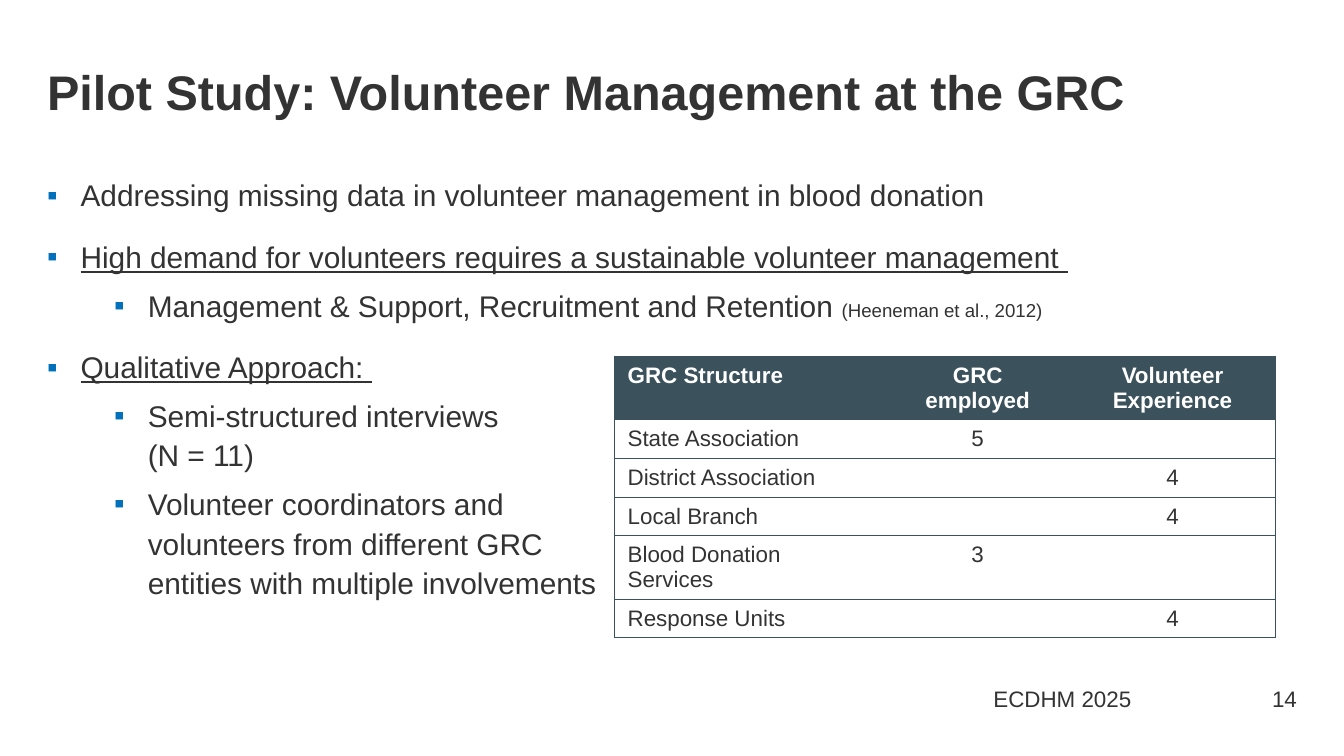
from dataclasses import dataclass

from lxml import etree
from pptx import Presentation
from pptx import util as u
from pptx.dml.color import RGBColor
from pptx.enum import text as t
from pptx.oxml.ns import qn


@dataclass(frozen=True)
class Theme:
    font: str = "Arial"
    ink: str = "333333"
    accent: str = "0271BB"
    header: str = "3B515B"
    white: str = "FFFFFF"
    title_size: int = 26
    body_size: int = 16
    small_size: int = 12
    citation_size: int = 10


THEME = Theme()
LEFT, CENTER, RIGHT = t.PP_ALIGN.LEFT, t.PP_ALIGN.CENTER, t.PP_ALIGN.RIGHT


def write(paragraph, wording, size=THEME.small_size, color=THEME.ink,
          bold=False, underline=False, align=LEFT):
    """Add formatted wording to a paragraph; a newline becomes a line break."""
    paragraph.alignment = align
    for number, line in enumerate(wording.split("\n")):
        if number:
            paragraph.add_line_break()
        run = paragraph.add_run()
        run.text = line
        run.font.name = THEME.font
        run.font.size = u.Pt(size)
        run.font.bold = bold
        run.font.underline = underline
        run.font.color.rgb = RGBColor.from_string(color)


class StudySlide:
    def __init__(self, deck, theme):
        self.theme = theme
        self.slide = deck.slides.add_slide(deck.slide_layouts[1])

    def place(self, shape, left, top, width, height):
        shape.left, shape.top = u.Inches(left), u.Inches(top)
        shape.width, shape.height = u.Inches(width), u.Inches(height)

    def frame(self, shape, anchor, left_inset=0.1, right_inset=0.1):
        frame = shape.text_frame
        frame.word_wrap = True
        frame.auto_size = t.MSO_AUTO_SIZE.NONE
        frame.vertical_anchor = anchor
        frame.margin_left, frame.margin_right = u.Inches(left_inset), u.Inches(right_inset)
        frame.margin_top = frame.margin_bottom = u.Inches(0.05)
        return frame

    def title(self, wording, *box):
        holder = self.slide.shapes.title
        self.place(holder, *box)
        paragraph = self.frame(holder, t.MSO_ANCHOR.TOP, left_inset=0).paragraphs[0]
        paragraph.line_spacing = 1.1
        write(paragraph, wording, size=self.theme.title_size, bold=True)

    def bullet(self, paragraph, level):
        paragraph.level = level
        props = paragraph._p.get_or_add_pPr()
        props.set("marL", str(u.Inches(0.25 + 0.5 * level)))
        props.set("indent", str(u.Inches(-0.25)))
        color = etree.SubElement(props, qn("a:buClr"))
        etree.SubElement(color, qn("a:srgbClr"), val=self.theme.accent)
        etree.SubElement(props, qn("a:buFont"), typeface=self.theme.font)
        etree.SubElement(props, qn("a:buChar"), char="▪")

    def bullets(self, points, *box):
        holder = self.slide.placeholders[1]
        self.place(holder, *box)
        frame = self.frame(holder, t.MSO_ANCHOR.TOP, left_inset=0)
        for number, (level, wording, underline, citation) in enumerate(points):
            paragraph = frame.add_paragraph() if number else frame.paragraphs[0]
            self.bullet(paragraph, level)
            paragraph.line_spacing = 1.1
            paragraph.space_before = u.Pt((5 if level else 12) if number else 0)
            write(paragraph, wording, size=self.theme.body_size, underline=underline)
            if citation:
                write(paragraph, citation, size=self.theme.citation_size)

    def footer(self, wording, align, right_inset, *box):
        label = self.slide.shapes.add_textbox(*map(u.Inches, box))
        frame = self.frame(label, t.MSO_ANCHOR.MIDDLE, right_inset=right_inset)
        write(frame.paragraphs[0], wording, align=align)

    def borders(self, cell, drawn_sides):
        props = cell._tc.get_or_add_tcPr()
        for side in "LRTB":
            line = etree.SubElement(props, qn(f"a:ln{side}"), w=str(u.Pt(0.5)))
            if side in drawn_sides:
                fill = etree.SubElement(line, qn("a:solidFill"))
                etree.SubElement(fill, qn("a:srgbClr"), val=self.theme.header)
            else:
                etree.SubElement(line, qn("a:noFill"))

    def table(self, rows, widths, heights, left, top):
        size = (left, top, sum(widths), sum(heights))
        table = self.slide.shapes.add_table(
            len(rows), len(widths), *map(u.Inches, size)).table
        table.horz_banding = False
        for column, width in zip(table.columns, widths):
            column.width = u.Inches(width)
        for row, height in zip(table.rows, heights):
            row.height = u.Inches(height)

        last = len(widths) - 1
        for r, row in enumerate(rows):
            for c, wording in enumerate(row):
                cell = table.cell(r, c)
                # Horizontal rules everywhere, vertical ones on the outside only
                self.borders(cell, "TB" + "L" * (c == 0) + "R" * (c == last))
                if r == 0:
                    cell.fill.solid()
                    cell.fill.fore_color.rgb = RGBColor.from_string(self.theme.header)
                else:
                    cell.fill.background()
                paragraph = cell.text_frame.paragraphs[0]
                if wording:
                    write(paragraph, wording, bold=r == 0,
                          color=self.theme.ink if r else self.theme.white,
                          align=CENTER if c else LEFT)
                else:
                    # Keeps an empty cell from stretching its row
                    end = etree.SubElement(paragraph._p, qn("a:endParaRPr"),
                                           sz=str(self.theme.small_size * 100))
                    etree.SubElement(end, qn("a:latin"), typeface=self.theme.font)


def main():
    deck = Presentation()
    deck.slide_width = u.Inches(10)
    deck.slide_height = deck.slide_width * 9 // 16
    study = StudySlide(deck, THEME)

    # Title
    study.title("Pilot Study: Volunteer Management at the GRC", 0.35, 0.37, 9.29, 0.63)

    # Study outline: level, wording, underlined, citation
    outline = [
        (0, "Addressing missing data in volunteer management in blood donation", False, ""),
        (0, "High demand for volunteers requires a sustainable volunteer management ", True, ""),
        (1, "Management & Support, Recruitment and Retention ", False,
         "(Heeneman et al., 2012)"),
        (0, "Qualitative Approach: ", True, ""),
        (1, "Semi-structured interviews\n(N = 11)", False, ""),
        (1, "Volunteer coordinators and\nvolunteers from different GRC\n"
            "entities with multiple involvements", False, ""),
    ]
    study.bullets(outline, 0.35, 1.24, 9.13, 3.46)

    # Footer
    study.footer("ECDHM 2025", CENTER, 0.1, 6.88, 5.05, 2.05, 0.3)
    study.footer("14", RIGHT, 0, 8.93, 5.05, 0.72, 0.3)

    # Interviewees by GRC entity
    interviewees = [
        ("GRC Structure", "GRC employed", "Volunteer Experience"),
        ("State Association", "5", ""),
        ("District Association", "", "4"),
        ("Local Branch", "", "4"),
        ("Blood Donation Services", "3", ""),
        ("Response Units", "", "4"),
    ]
    one_line, two_lines = 0.28, 0.47
    heights = [two_lines, one_line, one_line, one_line, two_lines, one_line]
    study.table(interviewees, [2.02, 1.37, 1.53], heights, 4.57, 2.65)

    deck.save("out.pptx")


if __name__ == "__main__":
    main()
